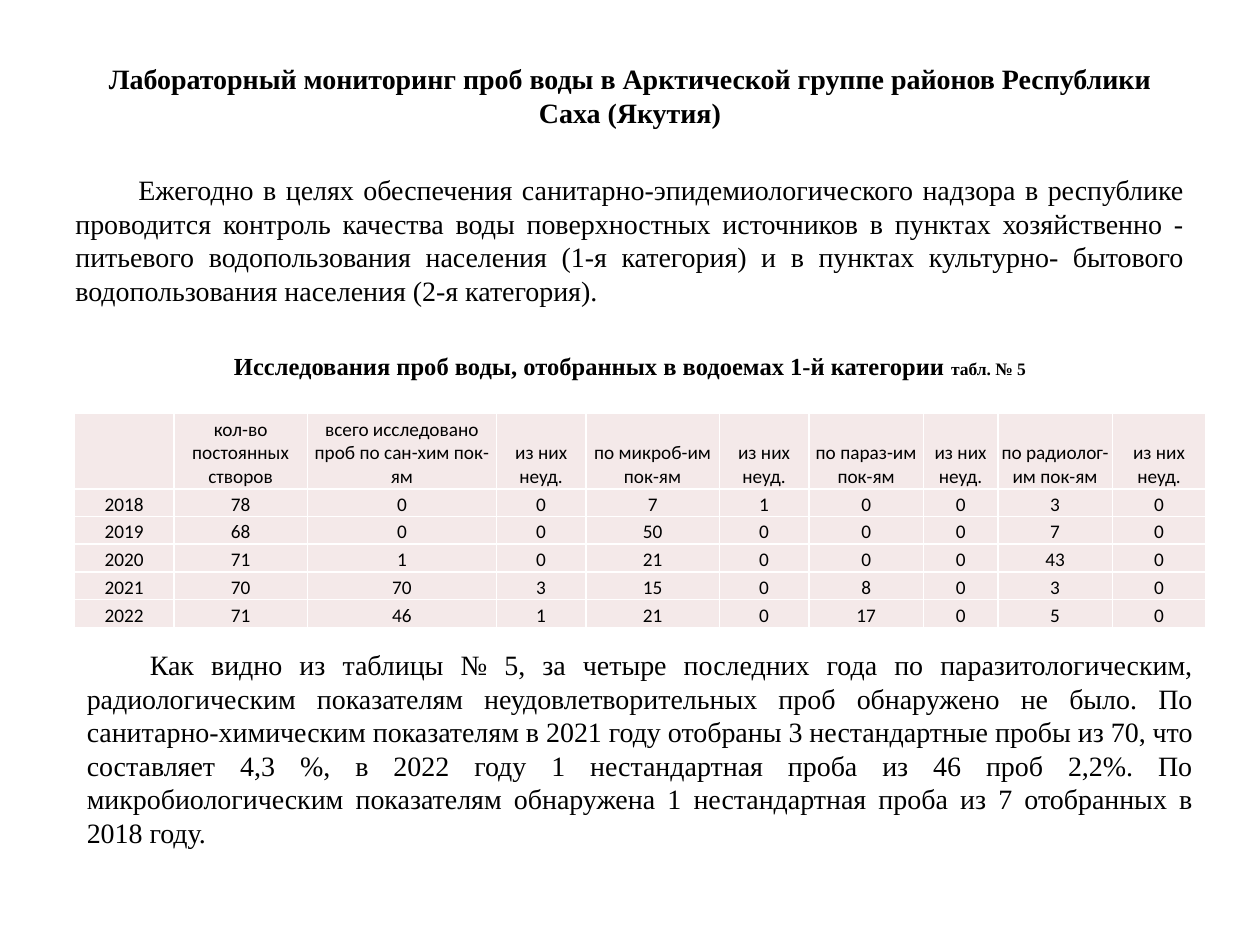
from lxml import etree
from pptx import Presentation
from pptx.dml.color import RGBColor
from pptx.enum.text import MSO_ANCHOR, PP_ALIGN
from pptx.oxml.ns import qn
from pptx.util import Inches, Pt

CENTER = PP_ALIGN.CENTER
JUSTIFY = PP_ALIGN.JUSTIFY
TOP = MSO_ANCHOR.TOP
BOTTOM = MSO_ANCHOR.BOTTOM
TITLE_ONLY = 5

COLORS = {"text": "000000", "cell": "F4E9E9", "border": "FFFFFF"}
SERIF = "Times New Roman"
SANS = "Calibri"

TITLE = "Лабораторный мониторинг проб воды в Арктической группе районов Республики Саха (Якутия)"
INTRO = (
    "\tЕжегодно в целях обеспечения санитарно-эпидемиологического надзора в республике "
    "проводится контроль качества воды поверхностных источников в пунктах хозяйственно - "
    "питьевого водопользования населения (1-я категория) и в пунктах культурно- бытового "
    "водопользования населения (2-я категория)."
)
CAPTION = "Исследования проб воды, отобранных в водоемах 1-й категории "
TABLE_NUMBER = "табл. № 5"
CONCLUSION = (
    "\tКак видно из таблицы № 5, за четыре последних года по паразитологическим, "
    "радиологическим показателям неудовлетворительных проб обнаружено не было. "
    "По санитарно-химическим показателям в 2021 году отобраны 3 нестандартные пробы из 70, "
    "что составляет 4,3 %, в 2022 году 1 нестандартная проба из 46 проб 2,2%. "
    "По микробиологическим показателям обнаружена 1 нестандартная проба из 7 отобранных "
    "в 2018 году."
)

UNSATISFACTORY = "из них неуд."
ROWS = [
    ["", "кол-во постоянных створов", "всего исследовано проб по сан-хим пок-ям", UNSATISFACTORY,
     "по микроб-им пок-ям", UNSATISFACTORY, "по параз-им пок-ям", UNSATISFACTORY,
     "по радиолог-им пок-ям", UNSATISFACTORY],
    [2018, 78, 0, 0, 7, 1, 0, 0, 3, 0],
    [2019, 68, 0, 0, 50, 0, 0, 0, 7, 0],
    [2020, 71, 1, 0, 21, 0, 0, 0, 43, 0],
    [2021, 70, 70, 3, 15, 0, 8, 0, 3, 0],
    [2022, 71, 46, 1, 21, 0, 17, 0, 5, 0],
]
COLUMN_WIDTHS = [0.79, 1.06, 1.5, 0.71, 1.06, 0.71, 0.91, 0.59, 0.91, 0.74]
HEADER_HEIGHT = 0.6
ROW_HEIGHT = 0.22


def format_paragraph(paragraph, font_name, size, alignment, bold=False, space_before=0):
    paragraph.alignment = alignment
    paragraph.space_before = Pt(space_before)
    paragraph.font.name = font_name
    paragraph.font.size = Pt(size)
    paragraph.font.bold = bold
    paragraph.font.color.rgb = RGBColor.from_string(COLORS["text"])


def set_title(slide):
    title = slide.shapes.title
    title.left, title.top = Inches(0.5), Inches(0.44)
    title.width, title.height = Inches(9), Inches(0.7)
    title.text_frame.vertical_anchor = TOP
    title.text_frame.text = TITLE
    format_paragraph(title.text_frame.paragraphs[0], SERIF, 16, CENTER, True, 3.2)


def add_text(slide, left, top, width, height, text, space_before=0):
    box = slide.shapes.add_textbox(Inches(left), Inches(top), Inches(width), Inches(height))
    frame = box.text_frame
    frame.word_wrap = True
    frame.text = text
    format_paragraph(frame.paragraphs[0], SERIF, 16, JUSTIFY, space_before=space_before)
    return frame


def add_caption(frame):
    paragraph = frame.add_paragraph()
    format_paragraph(paragraph, SERIF, 14, CENTER, True, 25)
    paragraph.add_run().text = CAPTION
    number = paragraph.add_run()
    number.text = TABLE_NUMBER
    number.font.size = Pt(10)


def set_borders(cell):
    properties = cell._tc.get_or_add_tcPr()
    for index, side in enumerate(("a:lnL", "a:lnR", "a:lnT", "a:lnB")):
        line = etree.Element(qn(side), w=str(Pt(1)))
        fill = etree.SubElement(line, qn("a:solidFill"))
        etree.SubElement(fill, qn("a:srgbClr"), val=COLORS["border"])
        properties.insert(index, line)


def format_cell(cell, value):
    cell.text = str(value)
    cell.vertical_anchor = BOTTOM
    cell.margin_left = cell.margin_right = cell.margin_top = Inches(0.01)
    cell.margin_bottom = 0
    cell.fill.solid()
    cell.fill.fore_color.rgb = RGBColor.from_string(COLORS["cell"])
    format_paragraph(cell.text_frame.paragraphs[0], SANS, 11, CENTER)
    set_borders(cell)


def add_samples_table(slide, left, top):
    heights = [HEADER_HEIGHT] + [ROW_HEIGHT] * (len(ROWS) - 1)
    table = slide.shapes.add_table(
        len(ROWS), len(COLUMN_WIDTHS), Inches(left), Inches(top),
        Inches(sum(COLUMN_WIDTHS)), Inches(sum(heights)),
    ).table
    for column, width in zip(table.columns, COLUMN_WIDTHS):
        column.width = Inches(width)
    for row, height, values in zip(table.rows, heights, ROWS):
        row.height = Inches(height)
        for cell, value in zip(row.cells, values):
            format_cell(cell, value)


def main():
    presentation = Presentation()
    presentation.slide_width = Inches(10)
    presentation.slide_height = Inches(7.5)
    slide = presentation.slides.add_slide(presentation.slide_layouts[TITLE_ONLY])
    set_title(slide)
    intro = add_text(slide, 0.5, 1.32, 9, 1.86, INTRO, 3.2)
    add_caption(intro)
    add_samples_table(slide, 0.59, 3.28)
    add_text(slide, 0.59, 5.09, 8.98, 1.72, CONCLUSION)
    presentation.save("out.pptx")


if __name__ == "__main__":
    main()
